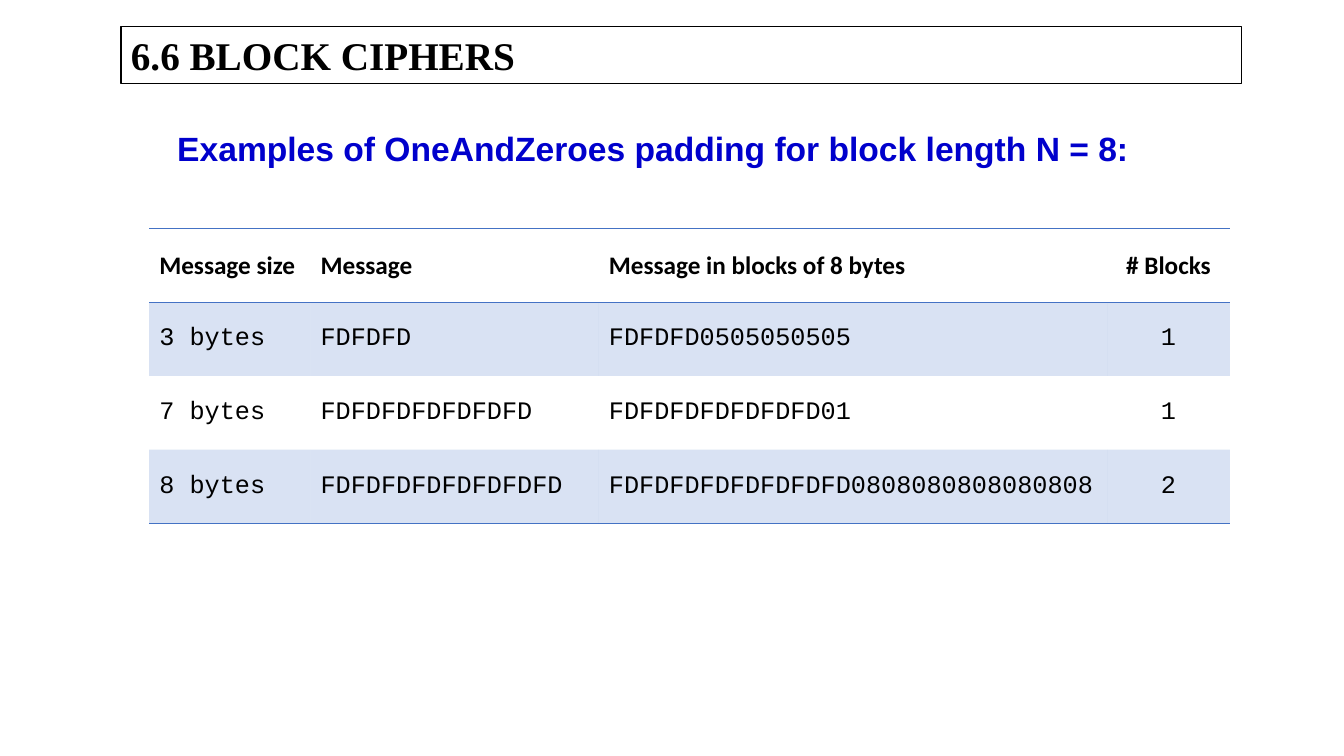
import pptx
import pptx.util
import pptx.dml.color
import pptx.enum.shapes
import pptx.enum.text
import pptx.oxml.ns
import lxml.etree

Inches = pptx.util.Inches
Pt = pptx.util.Pt
RGBColor = pptx.dml.color.RGBColor
ALIGN = pptx.enum.text.PP_ALIGN
MIDDLE = pptx.enum.text.MSO_ANCHOR.MIDDLE
qn = pptx.oxml.ns.qn

TITLE = "6.6 BLOCK CIPHERS"
HEADING = "Examples of OneAndZeroes padding for block length N = 8:"
ROWS = [
    ("Message size", "Message", "Message in blocks of 8 bytes", "# Blocks"),
    ("3 bytes", "FDFDFD", "FDFDFD0505050505", "1"),
    ("7 bytes", "FDFDFDFDFDFDFD", "FDFDFDFDFDFDFD01", "1"),
    ("8 bytes", "FDFDFDFDFDFDFDFD", "FDFDFDFDFDFDFDFD0808080808080808", "2"),
]
COLUMN_WIDTHS = (1.6, 2.86, 5.04, 1.22)
ROW_HEIGHT = 0.73
PLAIN_STYLE = "{2D5ABB26-0587-4C30-8999-92F81FD0307C}"

BLACK = RGBColor(0x00, 0x00, 0x00)
BLUE = RGBColor(0x00, 0x00, 0xCC)
ACCENT = RGBColor(0x44, 0x72, 0xC4)


def write(frame, text, font_name, size, color, bold, align=ALIGN.LEFT):
    frame.text = text
    para = frame.paragraphs[0]
    para.alignment = align
    font = para.runs[0].font
    font.name = font_name
    font.size = Pt(size)
    font.bold = bold
    font.color.rgb = color
    return para


def add_border(cell, side):
    properties = cell._tc.get_or_add_tcPr()
    line = lxml.etree.SubElement(properties, qn("a:" + side), w=str(Pt(1)))
    fill = lxml.etree.SubElement(line, qn("a:solidFill"))
    lxml.etree.SubElement(fill, qn("a:srgbClr"), val=str(ACCENT))


def shade(cell):
    cell.fill.solid()
    cell.fill.fore_color.rgb = ACCENT
    color = cell._tc.tcPr.find(qn("a:solidFill")).find(qn("a:srgbClr"))
    lxml.etree.SubElement(color, qn("a:alpha"), val="20000")


def add_title(page):
    box = page.shapes.add_shape(
        pptx.enum.shapes.MSO_SHAPE.RECTANGLE,
        Inches(1.2), Inches(0.26), Inches(11.11), Inches(0.57))
    box.shadow.inherit = False
    box.fill.background()
    box.line.color.rgb = BLACK
    box.line.width = Pt(0.75)
    box.text_frame.word_wrap = True
    box.text_frame.vertical_anchor = MIDDLE
    write(box.text_frame, TITLE, "Times New Roman", 28, BLACK, True)


def add_heading(page):
    box = page.shapes.add_textbox(
        Inches(1.66), Inches(1.26), Inches(10.53), Inches(0.65))
    box.text_frame.word_wrap = True
    para = write(box.text_frame, HEADING, "Arial", 24, BLUE, True, ALIGN.JUSTIFY)
    para.line_spacing = 0.9
    para.space_after = Pt(20)


def add_padding_table(page):
    frame = page.shapes.add_table(
        len(ROWS), len(COLUMN_WIDTHS), Inches(1.48), Inches(2.27),
        Inches(sum(COLUMN_WIDTHS)), Inches(ROW_HEIGHT * len(ROWS)))
    table = frame.table
    table.horz_banding = False
    table._tbl.tblPr.find(qn("a:tableStyleId")).text = PLAIN_STYLE
    for column, width in zip(table.columns, COLUMN_WIDTHS):
        column.width = Inches(width)
    last_row = len(ROWS) - 1
    last_column = len(COLUMN_WIDTHS) - 1
    for row_index, row in enumerate(ROWS):
        table.rows[row_index].height = Inches(ROW_HEIGHT)
        header = row_index == 0
        for column_index, text in enumerate(row):
            cell = table.cell(row_index, column_index)
            cell.vertical_anchor = MIDDLE
            align = ALIGN.CENTER if column_index == last_column else ALIGN.LEFT
            write(cell.text_frame, text, "Calibri" if header else "Courier New",
                  18, BLACK, header, align)
            if header:
                add_border(cell, "lnT")
            if row_index in (0, last_row):
                add_border(cell, "lnB")
            if row_index % 2:
                shade(cell)


def main():
    deck = pptx.Presentation()
    deck.slide_width = Inches(13.33)
    deck.slide_height = Inches(7.5)
    page = deck.slides.add_slide(deck.slide_layouts[6])
    add_heading(page)
    add_title(page)
    add_padding_table(page)
    deck.save("out.pptx")


if __name__ == "__main__":
    main()
